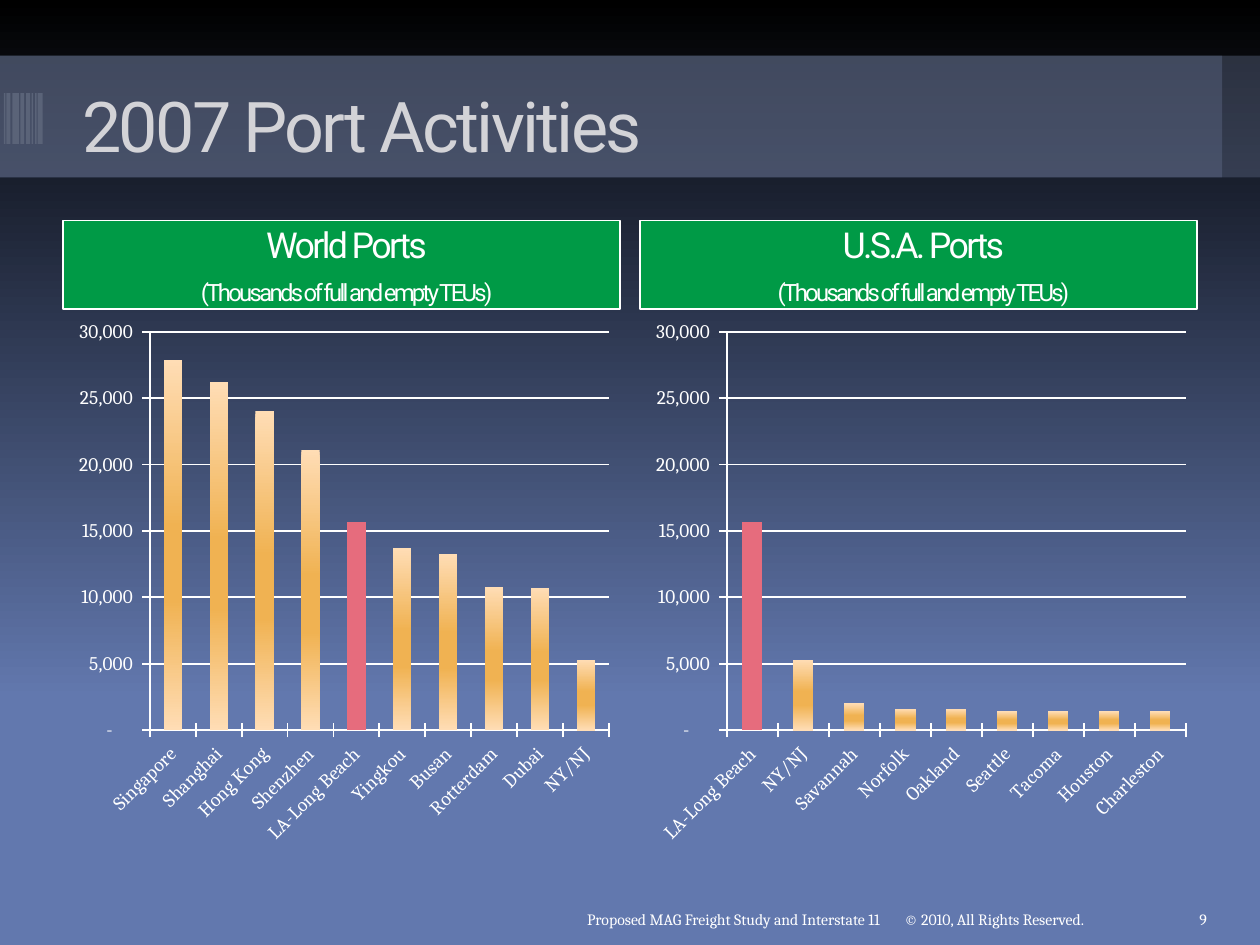
from lxml import etree
from pptx import Presentation
from pptx.chart.data import CategoryChartData
from pptx.dml.color import RGBColor
from pptx.enum.chart import XL_CHART_TYPE, XL_TICK_MARK
from pptx.enum.shapes import MSO_SHAPE
from pptx.enum.text import MSO_ANCHOR, MSO_AUTO_SIZE, PP_ALIGN
from pptx.oxml.ns import qn
from pptx.util import Cm, Pt

COLUMNS = XL_CHART_TYPE.COLUMN_CLUSTERED
CROSS = XL_TICK_MARK.CROSS
RECT = MSO_SHAPE.RECTANGLE
MIDDLE, BOTTOM = MSO_ANCHOR.MIDDLE, MSO_ANCHOR.BOTTOM
NO_FIT = MSO_AUTO_SIZE.NONE
LEFT, CENTER, RIGHT = PP_ALIGN.LEFT, PP_ALIGN.CENTER, PP_ALIGN.RIGHT

COMPARISON_LAYOUT = 4
NUMBER_FORMAT = '_(* #,##0_);_(* \\(#,##0\\);_(* "-"??_);_(@_)'
PLOT_LAYOUT = {"x": 0.156, "y": 0.04, "w": 0.824, "h": 0.73}
UNIT_NOTE = "(Thousands of full and empty TEUs)"

STRIPES = [(0.08, 0.03), (0.13, 0.08), (0.25, 0.13), (0.41, 0.08),
           (0.53, 0.08), (0.64, 0.03), (0.71, 0.03), (0.76, 0.1)]

PORT_GROUPS = [
    ("World Ports", 1.27, 1, "LA-Long Beach", {
        "Singapore": 27900, "Shanghai": 26200, "Hong Kong": 24000,
        "Shenzhen": 21100, "LA-Long Beach": 15700, "Yingkou": 13700,
        "Busan": 13300, "Rotterdam": 10800, "Dubai": 10700, "NY/NJ": 5300}),
    ("U.S.A. Ports", 12.9, 3, "LA-Long Beach", {
        "LA-Long Beach": 15700, "NY/NJ": 5300, "Savannah": 2000,
        "Norfolk": 1600, "Oakland": 1600, "Seattle": 1400,
        "Tacoma": 1400, "Houston": 1400, "Charleston": 1400}),
]

FOOTERS = [
    ("© 2010, All Rights Reserved.", 17.98, 5.92, LEFT),
    ("Proposed MAG Freight Study and Interstate 11", 2.54, 15.44, RIGHT),
    ("9", 23.93, 1.27, LEFT),
]


def rgb(value):
    return RGBColor.from_string(value)


class Deck:
    heading_font = "Roboto"
    text_font = "Cambria"
    white = "FFFFFF"
    title_color = "D3D3D7"
    band = "626E8D"
    stripe = "5A6378"
    label = "009A46"
    highlight = "E66C7D"
    sky = [(0, "000000"), (74, "6278AE"), (100, "6278AE")]
    bars = [(0, "FFDDB5"), (45, "F0B252"), (65, "F0B252"), (100, "FFDDB5")]

    def __init__(self, prs):
        self.s = prs.slides.add_slide(prs.slide_layouts[COMPARISON_LAYOUT])
        self.gradient(self.s.background.fill, self.s.element, self.sky)

    def gradient(self, fill, root, stops):
        fill.gradient()
        fill.gradient_angle = 270
        stop_list = root.find(".//" + qn("a:gsLst"))
        for old in list(stop_list):
            stop_list.remove(old)
        for position, color in stops:
            stop = etree.SubElement(stop_list, qn("a:gs"), pos=str(position * 1000))
            etree.SubElement(stop, qn("a:srgbClr"), val=color)

    def format_runs(self, p, font, size, color, spacing=0):
        for r in p.runs:
            r.font.name = font
            r.font.size = Pt(size)
            r.font.bold = False
            r.font.color.rgb = rgb(color)
            if spacing:
                r.font._element.set("spc", str(int(spacing * 100)))

    def place(self, sp, x, y, w, h):
        sp.left, sp.top, sp.width, sp.height = Cm(x), Cm(y), Cm(w), Cm(h)

    def rect(self, x, y, w, h, color, alpha=None):
        sp = self.s.shapes.add_shape(RECT, Cm(x), Cm(y), Cm(w), Cm(h))
        sp.shadow.inherit = False
        sp.fill.solid()
        sp.fill.fore_color.rgb = rgb(color)
        sp.line.fill.background()
        if alpha:
            clr = sp.element.spPr.find(".//" + qn("a:srgbClr"))
            etree.SubElement(clr, qn("a:alpha"), val=str(alpha * 1000))

    def title(self, text):
        sp = self.s.shapes.title
        self.s.shapes._spTree.append(sp.element)
        self.place(sp, 1.4, 1.42, 21.59, 2.54)
        tf = sp.text_frame
        tf.text = text
        tf.auto_size = NO_FIT
        tf.vertical_anchor = MIDDLE
        tf.margin_bottom = Cm(0.5)
        p = tf.paragraphs[0]
        p.alignment = LEFT
        self.format_runs(p, self.heading_font, 40, self.title_color, -1.5)

    def group_label(self, idx, x, name):
        sp = next(ph for ph in self.s.placeholders if ph.placeholder_format.idx == idx)
        self.place(sp, x, 4.45, 11.23, 1.78)
        sp.fill.solid()
        sp.fill.fore_color.rgb = rgb(self.label)
        sp.line.color.rgb = rgb(self.white)
        sp.line.width = Pt(0.75)
        tf = sp.text_frame
        tf.text = f"{name}\n{UNIT_NOTE}"
        tf.auto_size = NO_FIT
        tf.vertical_anchor = MIDDLE
        for p, size, before in zip(tf.paragraphs, (20.4, 13.6), (0, 7)):
            p.alignment = CENTER
            p.space_before = Pt(before)
            pPr = p._p.get_or_add_pPr()
            pPr.set("marL", str(Cm(0.2)))
            pPr.set("indent", "0")
            self.format_runs(p, self.heading_font, size, self.white, -1.5)

    def axis(self, axis):
        axis.major_tick_mark = CROSS
        axis.format.line.color.rgb = rgb(self.white)
        axis.format.line.width = Pt(1)
        axis.tick_labels.font.size = Pt(11)

    def chart(self, x, ports, marked):
        data = CategoryChartData()
        data.categories = list(ports)
        data.add_series("Series 1", list(ports.values()))
        chart = self.s.shapes.add_chart(
            COLUMNS, Cm(x), Cm(6.25), Cm(11.23), Cm(11), data).chart
        chart.has_legend = False
        chart.has_title = False
        chart.font.name = self.text_font
        chart.font.size = Pt(11)
        chart.font.color.rgb = rgb(self.white)

        cat, val = chart.category_axis, chart.value_axis
        self.axis(cat)
        self.axis(val)
        cat._element.find(".//" + qn("a:bodyPr")).set("rot", str(-45 * 60000))
        val.minimum_scale, val.maximum_scale, val.major_unit = 0, 30000, 5000
        val.tick_labels.number_format = NUMBER_FORMAT
        val.tick_labels.number_format_is_linked = False
        val.major_gridlines.format.line.color.rgb = rgb(self.white)
        val.major_gridlines.format.line.width = Pt(1)

        plot = chart.plots[0]
        plot.gap_width = 150
        plot.vary_by_categories = False
        series = plot.series[0]
        self.gradient(series.format.fill, series._element, self.bars)
        point_fill = series.points[list(ports).index(marked)].format.fill
        point_fill.solid()
        point_fill.fore_color.rgb = rgb(self.highlight)
        self.plot_layout(chart)

    def plot_layout(self, chart):
        area = chart._chartSpace.find(".//" + qn("c:plotArea"))
        layout = area.find(qn("c:layout"))
        if layout is None:
            layout = etree.Element(qn("c:layout"))
            area.insert(0, layout)
        manual = etree.SubElement(layout, qn("c:manualLayout"))
        settings = {"layoutTarget": "inner", "xMode": "edge", "yMode": "edge", **PLOT_LAYOUT}
        for tag, value in settings.items():
            etree.SubElement(manual, qn("c:" + tag), val=str(value))

    def footer(self, text, x, w, align):
        sp = self.s.shapes.add_textbox(Cm(x), Cm(17.83), Cm(w), Cm(1.02))
        tf = sp.text_frame
        tf.text = text
        tf.word_wrap = True
        tf.vertical_anchor = BOTTOM
        p = tf.paragraphs[0]
        p.alignment = align
        self.format_runs(p, self.text_font, 9, self.white)

    def remove_empty(self):
        for ph in list(self.s.placeholders):
            if not ph.text_frame.text:
                ph.element.getparent().remove(ph.element)


def main():
    prs = Presentation()
    prs.slide_width, prs.slide_height = Cm(25.4), Cm(19.05)
    deck = Deck(prs)
    for width in (25.4, 24.64):
        deck.rect(0, 1.12, width, 2.46, deck.band, 40)
    for x, width in STRIPES:
        deck.rect(x, 1.88, width, 1.02, deck.stripe)
    deck.title("2007 Port Activities")
    for name, x, idx, marked, ports in PORT_GROUPS:
        deck.group_label(idx, x, name)
        deck.chart(x, ports, marked)
    for footer in FOOTERS:
        deck.footer(*footer)
    deck.remove_empty()
    prs.save("out.pptx")


if __name__ == "__main__":
    main()
